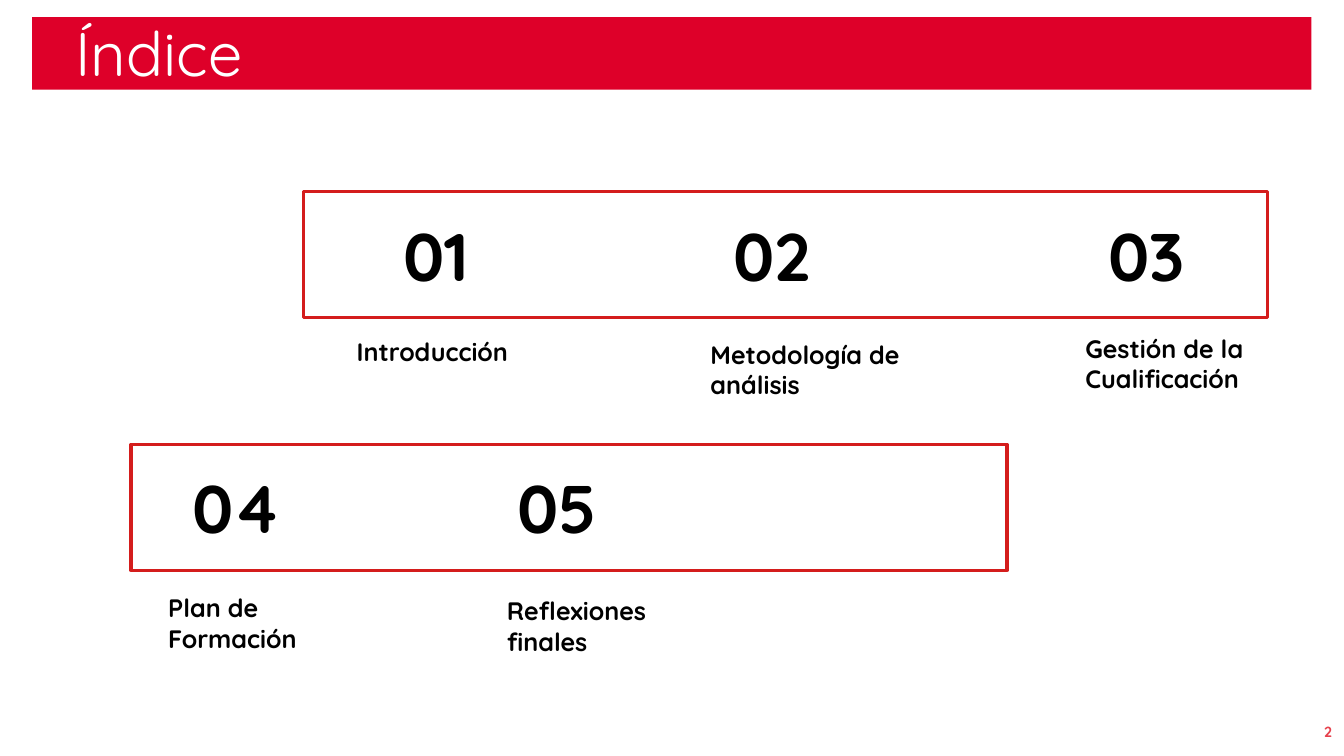
"""Build the index slide with its numbered sections."""
from typing import NamedTuple

from pptx import Presentation
from pptx.dml.color import RGBColor
from pptx.enum.shapes import MSO_SHAPE
from pptx.enum.text import MSO_ANCHOR as Anchor, MSO_AUTO_SIZE as AutoSize, PP_ALIGN as Align
from pptx.shapes.autoshape import Shape
from pptx.slide import Slide
from pptx.util import Pt

FONT = "Quicksand"
BANNER_RED = RGBColor(0xDE, 0x00, 0x29)
FRAME_RED = RGBColor(0xD4, 0x1D, 0x1C)
PAGE_RED = RGBColor(0xE6, 0x41, 0x4C)
BLACK = RGBColor(0x00, 0x00, 0x00)
WHITE = RGBColor(0xFF, 0xFF, 0xFF)


class Box(NamedTuple):
    left: float
    top: float
    width: float
    height: float


class Section(NamedTuple):
    number: str
    number_left: float
    label: str
    label_box: Box


class Row(NamedTuple):
    frame: Box
    number_top: float
    sections: tuple[Section, ...]


BANNER = Box(23, 12.2, 913.7, 51.8)
TITLE = Box(54, 12.2, 578.9, 51.8)
PAGE = Box(916.6, 508.3, 41.8, 28.8)
NUMBER_WIDTH, NUMBER_HEIGHT = 87.8, 65.5
ROWS = (
    Row(Box(216.7, 136.8, 689, 90), 149.8, (
        Section("01", 280.8, "Introducción", Box(247.7, 236.9, 129.6, 28.8)),
        Section("02", 517, "Metodología de análisis", Box(500.4, 239, 149.8, 51.1)),
        Section("03", 784.8, "Gestión de la Cualificación", Box(768.2, 234.7, 163.4, 51.1)),
    )),
    Row(Box(93.6, 317.5, 625.7, 90), 329.8, (
        Section("04", 130.3, "Plan de Formación", Box(113, 419.8, 121, 51.1)),
        Section("05", 362.2, "Reflexiones finales", Box(355, 421.9, 121, 51.1)),
    )),
)


def write(shape: Shape, text: str, *, size: float, color: RGBColor = BLACK, bold: bool = True,
          align: Align = Align.LEFT, anchor: Anchor = Anchor.TOP,
          auto_size: AutoSize = AutoSize.NONE) -> None:
    frame = shape.text_frame
    frame.text = text
    frame.word_wrap = True
    frame.auto_size = auto_size
    frame.vertical_anchor = anchor
    paragraph = frame.paragraphs[0]
    paragraph.alignment = align
    font = paragraph.runs[0].font
    font.name, font.size, font.bold = FONT, Pt(size), bold
    font.color.rgb = color


def add_text(slide: Slide, box: Box, text: str, **style) -> None:
    write(slide.shapes.add_textbox(*map(Pt, box)), text, **style)


def add_rectangle(slide: Slide, box: Box, fill: RGBColor | None = None,
                  line: RGBColor | None = None) -> Shape:
    shape = slide.shapes.add_shape(MSO_SHAPE.RECTANGLE, *map(Pt, box))
    shape.shadow.inherit = False
    if fill is None:
        shape.fill.background()
    else:
        shape.fill.solid()
        shape.fill.fore_color.rgb = fill
    if line is None:
        shape.line.fill.background()
    else:
        shape.line.color.rgb = line
        shape.line.width = Pt(2.25)
    return shape


def add_title(slide: Slide, text: str) -> None:
    title = slide.shapes.title
    title.left, title.top, title.width, title.height = map(Pt, TITLE)
    write(title, text, size=44, color=WHITE, bold=False, anchor=Anchor.BOTTOM)
    frame = title.text_frame
    frame.margin_left = frame.margin_top = frame.margin_right = frame.margin_bottom = 0
    frame.paragraphs[0].line_spacing = 0.9
    banner = add_rectangle(slide, BANNER, fill=BANNER_RED)
    title.element.addprevious(banner.element)


def add_row(slide: Slide, row: Row) -> None:
    add_rectangle(slide, row.frame, line=FRAME_RED)
    for section in row.sections:
        number_box = Box(section.number_left, row.number_top, NUMBER_WIDTH, NUMBER_HEIGHT)
        add_text(slide, number_box, section.number, size=48, auto_size=AutoSize.SHAPE_TO_FIT_TEXT)
        add_text(slide, section.label_box, section.label, size=18,
                 auto_size=AutoSize.SHAPE_TO_FIT_TEXT)


def main() -> None:
    presentation = Presentation()
    presentation.slide_width, presentation.slide_height = Pt(960), Pt(540)
    slide = presentation.slides.add_slide(presentation.slide_layouts.get_by_name("Title Only"))
    add_title(slide, "Índice")
    for row in ROWS:
        add_row(slide, row)
    add_text(slide, PAGE, "2", size=10.5, color=PAGE_RED, align=Align.RIGHT, anchor=Anchor.MIDDLE)
    presentation.save("out.pptx")


if __name__ == "__main__":
    main()
